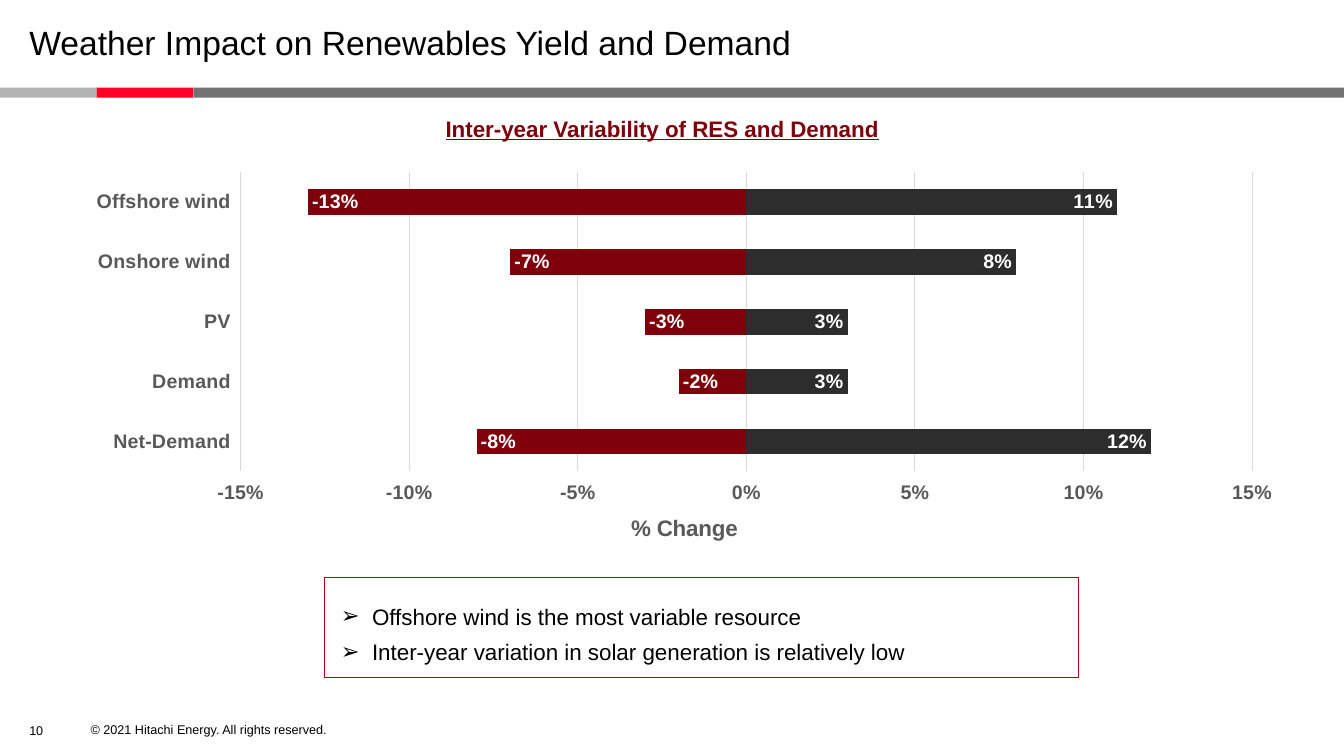
from lxml import etree
from pptx import Presentation
from pptx.chart.data import CategoryChartData
from pptx.dml.color import RGBColor
from pptx.enum.chart import XL_CHART_TYPE, XL_LABEL_POSITION, XL_TICK_LABEL_POSITION, XL_TICK_MARK
from pptx.enum.shapes import MSO_SHAPE
from pptx.enum.text import MSO_ANCHOR, MSO_AUTO_SIZE, PP_ALIGN
from pptx.oxml import parse_xml
from pptx.oxml.ns import nsdecls, qn
from pptx.util import Inches, Pt

RECTANGLE = MSO_SHAPE.RECTANGLE
BAR_STACKED = XL_CHART_TYPE.BAR_STACKED
INSIDE_END = XL_LABEL_POSITION.INSIDE_END
LABELS_LOW = XL_TICK_LABEL_POSITION.LOW
TICK_NONE, TICK_OUTSIDE = XL_TICK_MARK.NONE, XL_TICK_MARK.OUTSIDE
TOP, MIDDLE = MSO_ANCHOR.TOP, MSO_ANCHOR.MIDDLE
LEFT, CENTER = PP_ALIGN.LEFT, PP_ALIGN.CENTER
NO_AUTOFIT = MSO_AUTO_SIZE.NONE

FONT = "Arial"
BLACK, MAROON, CHARCOAL, GREY, GRID = "000000", "7E000A", "2D2D2D", "595959", "D9D9D9"

TITLE = "Weather Impact on Renewables Yield and Demand"
HEADING = "Inter-year Variability of RES and Demand"
FINDINGS = [
    "Offshore wind is the most variable resource",
    "Inter-year variation in solar generation is relatively low",
]
PAGE_NUMBER = "10"
COPYRIGHT = "© 2021 Hitachi Energy. All rights reserved."
CATEGORIES = ["Net-Demand", "Demand", "PV", "Onshore wind", "Offshore wind"]
SERIES = [
    ("Series 1", [-0.08, -0.02, -0.03, -0.07, -0.13], MAROON),
    ("Series 2", [0.12, 0.03, 0.03, 0.08, 0.11], CHARCOAL),
]
BAND_SEGMENTS = [(0, 7.2, "B3B3B3"), (7.2, 7.2, "FF0026"), (14.4, 85.6, "737373")]

# Left, top, width and height as percentages of the slide
AREAS = {
    "title": (2.18, 2.67, 74.94, 6.4),
    "heading": (30, 15.2, 38.56, 4),
    "chart": (0.98, 19.6, 94.07, 52.8),
    "findings": (24.16, 76.4, 56.11, 13.2),
    "page number": (2.18, 94.4, 2.48, 4.4),
    "copyright": (6.75, 95.2, 18.6, 2.67),
}
BAND_TOP, BAND_HEIGHT = 11.6, 1.33
PLOT_AREA = {"x": 0.18, "y": 0.06, "w": 0.8, "h": 0.75}

presentation = Presentation()
presentation.slide_width, presentation.slide_height = Inches(13.33), Inches(7.5)


def color(value):
    """Turn a hex string into a colour."""
    return RGBColor.from_string(value)


def area(left, top, width, height):
    """Turn percentages of the slide into lengths."""
    across, down = presentation.slide_width / 100, presentation.slide_height / 100
    return int(left * across), int(top * down), int(width * across), int(height * down)


def place(shape, name):
    """Move a placeholder to its named area."""
    shape.left, shape.top, shape.width, shape.height = area(*AREAS[name])


def style(font, size, value, bold=False):
    """Set the face, size, colour and weight of a font."""
    font.name, font.size, font.bold = FONT, Pt(size), bold
    font.color.rgb = color(value)


def set_frame(frame, anchor=MIDDLE, left=0, top=0):
    """Set the margins, wrapping and anchor of a text frame."""
    frame.margin_left, frame.margin_top = Inches(left), Inches(top)
    frame.margin_right = frame.margin_bottom = 0
    frame.word_wrap, frame.auto_size = True, NO_AUTOFIT
    frame.vertical_anchor = anchor


def add_text(slide, name, text, size, value=BLACK, bold=False, anchor=MIDDLE, align=LEFT):
    """Add a one-line text box and return its paragraph."""
    frame = slide.shapes.add_textbox(*area(*AREAS[name])).text_frame
    set_frame(frame, anchor)
    paragraph = frame.paragraphs[0]
    paragraph.text, paragraph.alignment = text, align
    style(paragraph.font, size, value, bold)
    return paragraph


def add_band(slide):
    """Draw the coloured band under the title."""
    for left, width, value in BAND_SEGMENTS:
        segment = slide.shapes.add_shape(RECTANGLE, *area(left, BAND_TOP, width, BAND_HEIGHT))
        segment.shadow.inherit = False
        segment.fill.solid()
        segment.fill.fore_color.rgb = color(value)
        segment.line.fill.background()


def add_title(slide):
    """Fill and format the title placeholder."""
    title = slide.shapes.title
    place(title, "title")
    set_frame(title.text_frame)
    paragraph = title.text_frame.paragraphs[0]
    paragraph.text, paragraph.alignment, paragraph.line_spacing = TITLE, LEFT, 0.95
    style(paragraph.font, 24, BLACK)


def add_findings(slide):
    """Fill the outlined body placeholder with arrow bullets."""
    body = slide.placeholders[1]
    place(body, "findings")
    body.line.color.rgb = color("B1000E")
    body.line.width = Pt(0.75)
    frame = body.text_frame
    set_frame(frame, TOP, left=0.16, top=0.25)
    for index, finding in enumerate(FINDINGS):
        paragraph = frame.paragraphs[0] if index == 0 else frame.add_paragraph()
        paragraph.text = finding
        properties = paragraph._p.get_or_add_pPr()
        properties.set("marL", str(Inches(0.31)))
        properties.set("indent", str(-Inches(0.31)))
        bullet = etree.SubElement(properties, qn("a:buChar"))
        bullet.set("char", "➢")
        paragraph.space_before = Pt(6 if index else 0)
        style(paragraph.font, 16, BLACK)


def set_plot_area(chart):
    """Fix the inner plot area as shares of the chart."""
    sizes = "".join(f'<c:{key} val="{value}"/>' for key, value in PLOT_AREA.items())
    layout = parse_xml(
        f'<c:layout {nsdecls("c")}><c:manualLayout><c:layoutTarget val="inner"/>'
        f'<c:xMode val="edge"/><c:yMode val="edge"/>{sizes}</c:manualLayout></c:layout>'
    )
    plot_area = chart._chartSpace.chart.plotArea
    for previous in plot_area.findall(qn("c:layout")):
        plot_area.remove(previous)
    plot_area.insert(0, layout)


def add_variability_chart(slide):
    """Add the stacked bars of yearly change."""
    data = CategoryChartData(number_format="0%")
    data.categories = CATEGORIES
    for name, values, _ in SERIES:
        data.add_series(name, values)
    chart = slide.shapes.add_chart(BAR_STACKED, *area(*AREAS["chart"]), data).chart
    chart.has_legend = chart.has_title = False
    style(chart.font, 12, BLACK)
    set_plot_area(chart)

    plot = chart.plots[0]
    plot.gap_width, plot.overlap, plot.vary_by_categories = 133, 100, False
    for series, (_, _, value) in zip(plot.series, SERIES):
        series.invert_if_negative = False
        series.format.fill.solid()
        series.format.fill.fore_color.rgb = color(value)
        labels = series.data_labels
        labels.show_value, labels.position = True, INSIDE_END
        labels.number_format, labels.number_format_is_linked = "0%", False
        style(labels.font, 14, "FFFFFF", True)

    categories, change = chart.category_axis, chart.value_axis
    for axis in (categories, change):
        style(axis.tick_labels.font, 14, GREY, True)
    categories.tick_label_position = LABELS_LOW
    categories.major_tick_mark = TICK_NONE
    change.major_tick_mark = TICK_OUTSIDE
    change.minimum_scale, change.maximum_scale, change.major_unit = -0.15, 0.15, 0.05
    change.tick_labels.number_format = "0%"
    change.tick_labels.number_format_is_linked = False
    change.format.line.fill.background()
    for line in (categories.format.line, change.major_gridlines.format.line):
        line.color.rgb = color(GRID)
        line.width = Pt(0.75)
    caption = change.axis_title.text_frame.paragraphs[0]
    caption.text = "% Change"
    style(caption.font, 16, GREY, True)


def main():
    """Build and save the slide."""
    slide = presentation.slides.add_slide(presentation.slide_layouts[1])
    add_band(slide)
    add_title(slide)
    add_findings(slide)
    add_variability_chart(slide)
    heading = add_text(slide, "heading", HEADING, 16, MAROON, True, TOP, CENTER)
    heading.font.underline = True
    add_text(slide, "page number", PAGE_NUMBER, 9)
    add_text(slide, "copyright", COPYRIGHT, 9)
    presentation.save("out.pptx")


if __name__ == "__main__":
    main()
